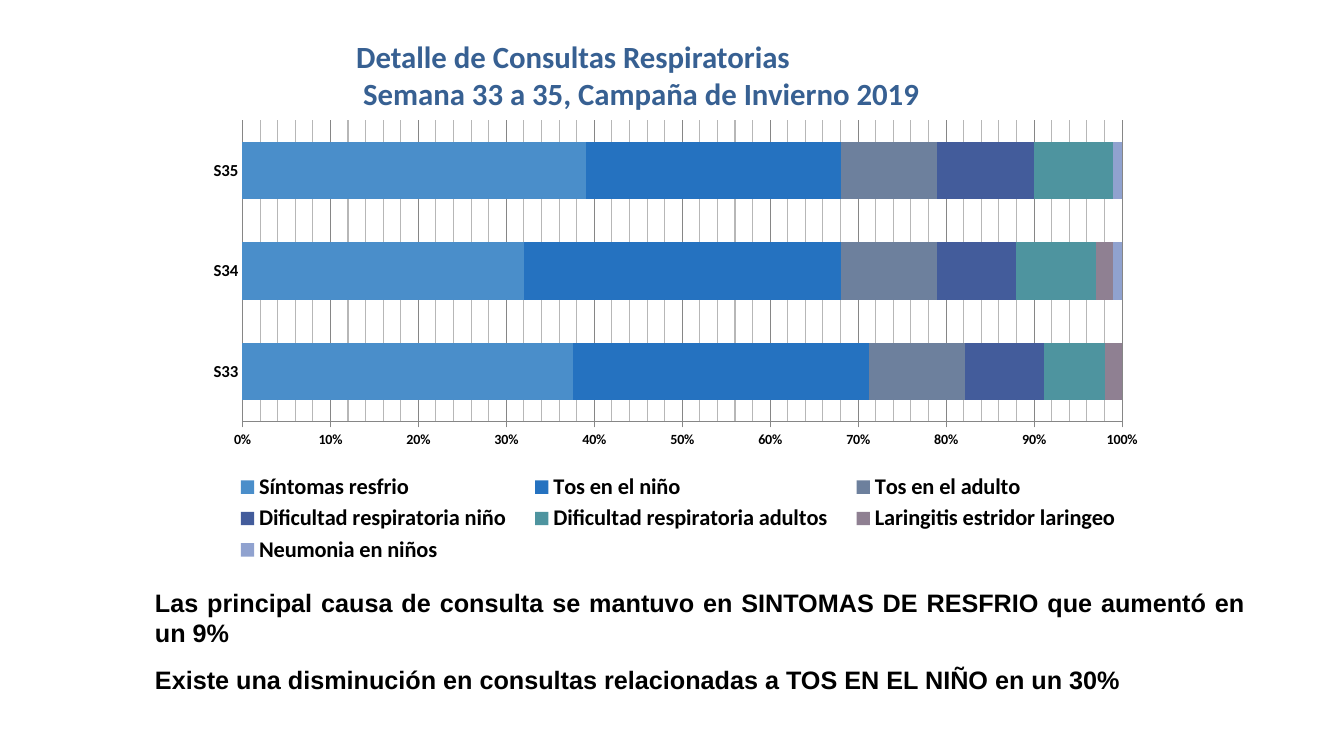
from copy import deepcopy

from lxml import etree
from pptx import Presentation
from pptx.chart.data import CategoryChartData
from pptx.dml.color import RGBColor
from pptx.enum.chart import XL_CHART_TYPE as ChartType, XL_LEGEND_POSITION as LegendSide
from pptx.enum.chart import XL_TICK_MARK as TickMark
from pptx.enum.text import MSO_ANCHOR as Anchor, PP_ALIGN as Align
from pptx.oxml.ns import qn
from pptx.util import Emu, Inches, Pt

PX = 914400 / 100.8  # one pixel in EMU

COLORS = {
    "title": "376092", "text": "000000", "major": "868686", "minor": "B7B7B7",
    "sky": "629DD1", "blue": "297FD5", "slate": "7F8FA9", "navy": "4A66AC",
    "teal": "5AA2AE", "mauve": "9D90A0",
}
WEEKS = ["S33", "S34", "S35"]
# name, percentages by week, colour, brightness
SYMPTOMS = [
    ("Síntomas resfrio", (38, 32, 39), "sky", -0.1),
    ("Tos en el niño", (34, 36, 29), "blue", -0.1),
    ("Tos en el adulto", (11, 11, 11), "slate", -0.1),
    ("Dificultad respiratoria niño", (9, 9, 11), "navy", -0.1),
    ("Dificultad respiratoria adultos", (7, 9, 9), "teal", -0.1),
    ("Laringitis estridor laringeo", (2, 2, 0), "mauve", -0.1),
    ("Neumonia en niños", (0, 1, 1), "navy", 0.4),
]
FINDINGS = [
    "Las principal causa de consulta se mantuvo en SINTOMAS DE RESFRIO que aumentó en un 9%",
    "Existe una disminución en consultas relacionadas a TOS EN EL NIÑO en un 30%",
]


def px(*lengths):
    return [Emu(round(length * PX)) for length in lengths]


def color(name):
    return RGBColor.from_string(COLORS[name])


def style_font(font, size, name="Calibri", ink="text"):
    font.name, font.size, font.bold = name, Pt(size), True
    font.color.rgb = color(ink)


def style_line(line, ink):
    line.color.rgb = color(ink)
    line.width = Pt(0.75)


def set_layout(parent, index, inner, **fractions):
    """Place a chart part by fractions of the chart area."""
    for old in parent.findall(qn("c:layout")):
        parent.remove(old)
    layout = etree.Element(qn("c:layout"))
    manual = etree.SubElement(layout, qn("c:manualLayout"))
    settings = {"layoutTarget": "inner"} if inner else {}
    settings.update(xMode="edge", yMode="edge", **fractions)
    for tag, value in settings.items():
        etree.SubElement(manual, qn("c:" + tag)).set("val", str(value))
    parent.insert(index, layout)


def add_title(page, text):
    title = page.shapes.title
    title.left, title.top, title.width, title.height = px(346, 36, 728, 77)
    frame = title.text_frame
    frame.text = text
    frame.vertical_anchor = Anchor.MIDDLE
    para = frame.paragraphs[0]
    para.alignment = Align.LEFT
    for span in para.runs:
        style_font(span.font, 22, ink="title")


def add_gridlines(axis):
    """Style the major gridlines, then derive the minor ones from them."""
    axis.has_major_gridlines = axis.has_minor_gridlines = True
    style_line(axis.major_gridlines.format.line, "major")
    major = axis._element.find(qn("c:majorGridlines"))
    minor = axis._element.find(qn("c:minorGridlines"))
    minor.append(deepcopy(major.find(qn("c:spPr"))))
    minor.find(".//" + qn("a:srgbClr")).set("val", COLORS["minor"])


def style_axes(chart):
    weeks, share = chart.category_axis, chart.value_axis
    style_font(weeks.tick_labels.font, 12)
    style_font(share.tick_labels.font, 10)
    weeks.major_tick_mark = TickMark.NONE
    share.major_tick_mark = TickMark.OUTSIDE
    share.minimum_scale, share.maximum_scale = 0, 1
    share.major_unit, share.minor_unit = 0.1, 0.02
    share.tick_labels.number_format = "0%"
    share.tick_labels.number_format_is_linked = False
    add_gridlines(share)
    for axis in (weeks, share):
        style_line(axis.format.line, "major")


def add_symptom_chart(page):
    data = CategoryChartData()
    data.categories = WEEKS
    for name, values, _, _ in SYMPTOMS:
        data.add_series(name, values)
    chart = page.shapes.add_chart(
        ChartType.BAR_STACKED_100, *px(180, 113, 976, 469), data).chart
    chart.has_title = False
    style_font(chart.font, 10)
    style_axes(chart)

    # Bars
    plot = chart.plots[0]
    plot.gap_width, plot.overlap = 75, 100
    plot.vary_by_categories = False
    for series, (_, _, ink, brightness) in zip(plot.series, SYMPTOMS):
        fill = series.format.fill
        fill.solid()
        fill.fore_color.rgb = color(ink)
        fill.fore_color.brightness = brightness

    # Legend
    chart.has_legend = True
    legend = chart.legend
    legend.position = LegendSide.RIGHT
    legend.include_in_layout = False
    style_font(legend.font, 16)

    plot_area = chart._chartSpace.find(".//" + qn("c:plotArea"))
    set_layout(plot_area, 0, True, x=0.064, y=0.016, w=0.901, h=0.642)
    set_layout(legend._element, 1, False, x=0.04, y=0.76, w=0.94, h=0.21)


def add_findings(page, texts):
    frame = page.shapes.add_textbox(*px(143, 582, 1112, 119)).text_frame
    frame.word_wrap = True
    frame.text = "\n".join(texts)
    for para in frame.paragraphs:
        para.alignment = Align.JUSTIFY
        para.space_after = Pt(12)
        para._p.get_or_add_pPr().set("marL", str(Inches(0.02)))
        for span in para.runs:
            style_font(span.font, 18, "Arial")


def main():
    deck = Presentation()
    deck.slide_width, deck.slide_height = Inches(13.33), Inches(7.5)
    page = deck.slides.add_slide(deck.slide_layouts[5])
    add_title(page, "Detalle de Consultas Respiratorias\v"
                    " Semana 33 a 35, Campaña de Invierno 2019")
    add_symptom_chart(page)
    add_findings(page, FINDINGS)
    deck.save("out.pptx")


if __name__ == "__main__":
    main()
